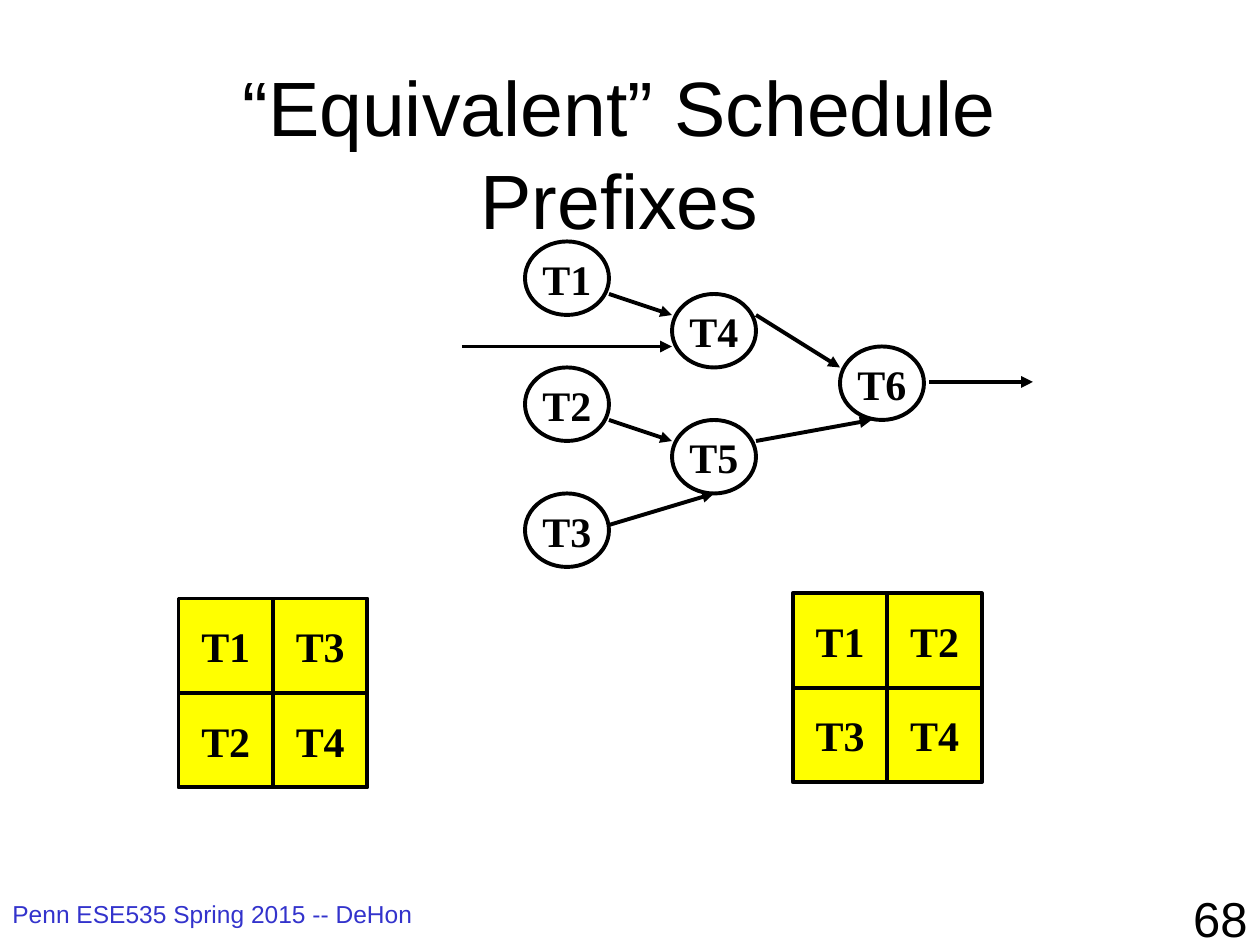
from dataclasses import dataclass

from lxml.etree import SubElement
from pptx import Presentation
from pptx.dml.color import RGBColor as RGB
from pptx.enum.shapes import MSO_CONNECTOR as CONN, MSO_SHAPE as SHAPE
from pptx.enum.text import MSO_ANCHOR as ANCHOR, MSO_AUTO_SIZE as AUTO, PP_ALIGN as ALIGN
from pptx.oxml.ns import qn
from pptx.util import Emu, Pt

PX = 9525  # EMU per px, 96 px to the inch


@dataclass(frozen=True)
class Theme:
    ink: RGB = RGB(0, 0, 0)
    paper: RGB = RGB(255, 255, 255)
    slot: RGB = RGB(255, 255, 0)
    footer: RGB = RGB(0x33, 0x33, 0xCC)
    sans: str = "Arial"
    serif: str = "Times New Roman"
    title_size: int = 44
    number_size: int = 28
    task_size: int = 24
    footer_size: int = 14
    line: float = 2.25


def px(*lengths):
    return [Emu(n * PX) for n in lengths]


class Deck:
    def __init__(self, theme, width, height):
        self.theme = theme
        self.prs = Presentation()
        self.prs.slide_width, self.prs.slide_height = px(width, height)
        self.s = None

    def slide(self):
        self.s = self.prs.slides.add_slide(self.prs.slide_layouts[5])

    def set_text(self, tf, text, size, color, font, align, bold=False):
        tf.text = text
        p = tf.paragraphs[0]
        p.alignment = align
        f = p.runs[0].font
        f.name, f.size, f.bold = font, Pt(size), bold
        f.color.rgb = color

    def title(self, text, *box):
        t, sp = self.theme, self.s.shapes.title
        sp.left, sp.top, sp.width, sp.height = px(*box)
        tf = sp.text_frame
        tf.word_wrap, tf.auto_size = True, AUTO.NONE
        tf.vertical_anchor = ANCHOR.MIDDLE
        self.set_text(tf, text, t.title_size, t.ink, t.sans, ALIGN.CENTER)

    def label(self, text, box, size, color, align=ALIGN.LEFT):
        tf = self.s.shapes.add_textbox(*px(*box)).text_frame
        tf.word_wrap = True
        self.set_text(tf, text, size, color, self.theme.sans, align)

    def task(self, name, kind, fill, *box):
        t = self.theme
        sp = self.s.shapes.add_shape(kind, *px(*box))
        sp.shadow.inherit = False
        sp.fill.solid()
        sp.fill.fore_color.rgb = fill
        sp.line.color.rgb, sp.line.width = t.ink, Pt(t.line)
        tf = sp.text_frame
        tf.word_wrap, tf.vertical_anchor = False, ANCHOR.MIDDLE
        self.set_text(tf, name, t.task_size, t.ink, t.serif, ALIGN.CENTER, bold=True)

    def node(self, name, x, y):
        self.task(name, SHAPE.OVAL, self.theme.paper, x, y, 64, 56)

    def schedule(self, rows, x, y, side=72):
        """Draw a grid of square time slots."""
        for i, row in enumerate(rows):
            for j, name in enumerate(row):
                self.task(name, SHAPE.RECTANGLE, self.theme.slot,
                          x + j * side, y + i * side, side, side)

    def arrow(self, *ends):
        c = self.s.shapes.add_connector(CONN.STRAIGHT, *px(*ends))
        c.line.color.rgb, c.line.width = self.theme.ink, Pt(self.theme.line)
        sp_pr = c._element.spPr
        SubElement(sp_pr.find(qn("a:ln")), qn("a:tailEnd"), type="triangle")
        SubElement(sp_pr, qn("a:effectLst"))


NODES = {
    "T1": (400, 184), "T2": (400, 280), "T3": (400, 376),
    "T4": (512, 224), "T5": (512, 320), "T6": (640, 264),
}
ARROWS = [
    (464, 224, 512, 240),  # T1 to T4
    (352, 264, 512, 264),  # input to T4
    (464, 320, 512, 336),  # T2 to T5
    (464, 400, 544, 376),  # T3 to T5
    (576, 240, 640, 280),  # T4 to T6
    (576, 336, 664, 320),  # T5 to T6
    (708, 291, 787, 291),  # T6 to output
]


def main():
    theme = Theme()
    deck = Deck(theme, 960, 720)
    deck.slide()
    deck.label("Penn ESE535 Spring 2015 -- DeHon", (0, 680, 368, 40),
               theme.footer_size, theme.footer)
    deck.label("68", (760, 672, 200, 48), theme.number_size, theme.ink, ALIGN.RIGHT)
    deck.title("“Equivalent” Schedule Prefixes", 64, 56, 816, 120)
    deck.schedule([("T1", "T3"), ("T2", "T4")], 136, 456)
    deck.schedule([("T1", "T2"), ("T3", "T4")], 604, 452)
    for name, at in NODES.items():
        deck.node(name, *at)
    for ends in ARROWS:
        deck.arrow(*ends)
    deck.prs.save("out.pptx")


if __name__ == "__main__":
    main()
